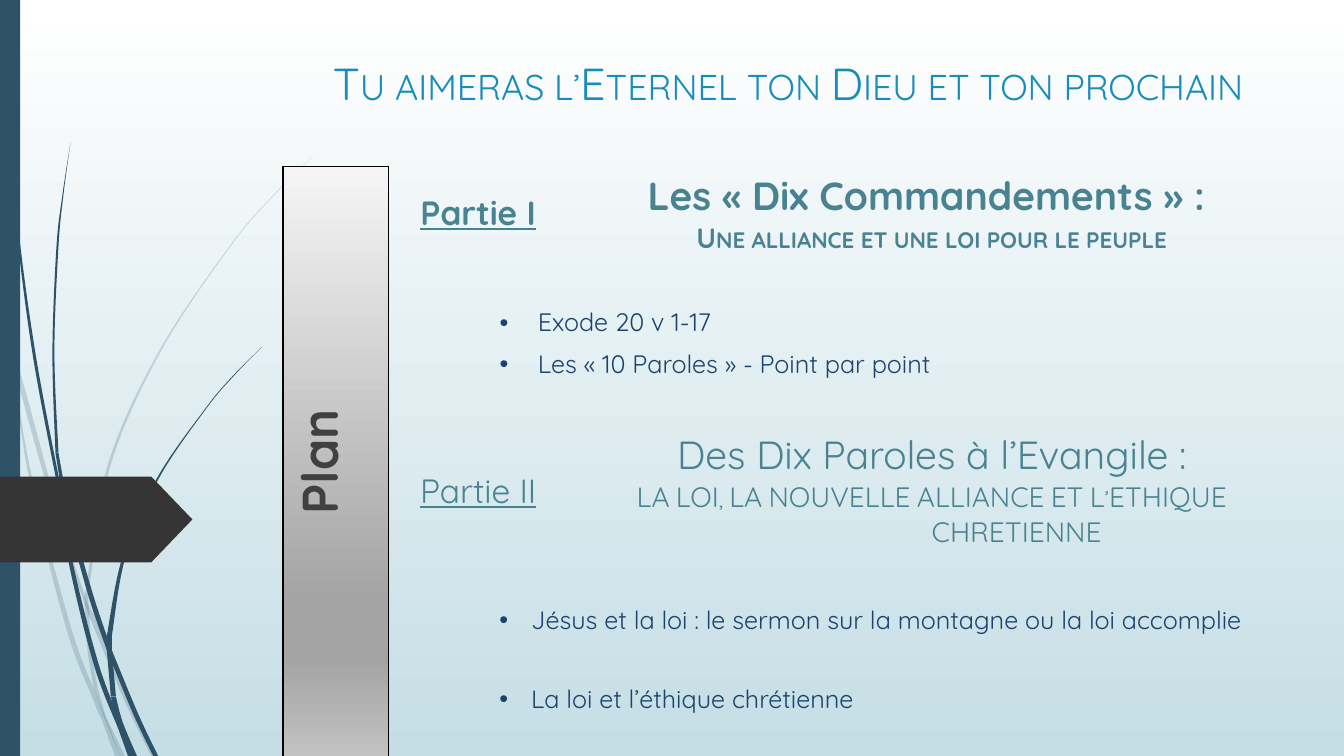
from lxml import etree
from pptx import Presentation, util as u
from pptx.dml.color import RGBColor
from pptx.enum import shapes, text
from pptx.oxml.ns import qn

TITLE = "Tu aimeras l’Eternel ton Dieu et ton prochain"
SIDE = "Plan"
# row number: (label, heading, subheading, bold)
PARTS = {
    0: ("Partie I", "Les « Dix Commandements » : ",
        "Une alliance et une loi pour le peuple", True),
    5: ("Partie II", "Des Dix Paroles à l’Evangile :",
        "LA LOI, LA NOUVELLE ALLIANCE ET L’ETHIQUE CHRETIENNE", False),
}
# row number: (text, left margin in cm, hanging indent in cm)
POINTS = {
    2: ("Exode 20 v 1-17", 3.5, 0.96),
    3: ("Les « 10 Paroles » - Point par point", 3.5, 0.96),
    7: ("Jésus et la loi : le sermon sur la montagne ou la loi accomplie", 3.33, 0.8),
    8: ("La loi et l’éthique chrétienne", 3.33, 0.8),
}
COLS = [2.67, 4.5, 18.36]
ROWS = [2.36, 1.05, 1.04, 1.04, 1.04, 3.29, 1.09, 1.04, 2.95]

THEME = {
    "font": "Quicksand",
    "title": (32, "178DBB"), "side": (36, "404040"), "label": (24, "498392"),
    "head": (28, "498392"), "sub": (20, "498392"), "point": (18, "1C436D"),
    "stem": "2E5369", "tag": "353535", "edge": "000000",
    "sky": [(0, "FFFFFF"), (100, "C5DEE5")],
    "steel": [(0, "F5F5F5"), (74, "A4A4A4"), (83, "A4A4A4"), (100, "C2C2C2")],
}

# Grass blades: (joints, knots); a knot is left edge x, y and breadth in inches,
# a joint is the number of a knot where one section ends and the next begins
PALE = [
    ([1, 4, 5], [(0, 2.82, .01), (.1, 3.44, .01), (.17, 3.76, .05), (.58, 5.22, .04),
                 (.84, 5.99, .03), (.88, 6.1, .05), (1.23, 6.94, .05), (1.5, 7.5, .05)]),
    ([4], [(.11, 3.5, 0), (.28, 4.7, .03), (.65, 6.21, .05), (.92, 6.93, .05),
           (1.01, 7.14, .05), (1.14, 7.5, .05)]),
    ([5, 8, 9], [(3.12, 1.53, 0), (2.68, 1.97, .01), (2.28, 2.44, .01),
                 (1.58, 3.48, .02), (1.07, 4.61, .03), (.85, 5.86, .03),
                 (.84, 5.99, .04), (.87, 6.46, .04), (.93, 6.83, .04),
                 (1.03, 7.11, .02), (1.19, 7.5, .05)]),
]
DARK = [
    ([4, 7], [(.03, 0, .01), (.07, 1.1, .01), (.17, 2.33, .02), (.33, 3.55, .03),
              (.56, 4.77, .03), (.68, 5.57, .04), (.93, 6.59, .05), (1.17, 7.22, .05),
              (1.27, 7.5, .06)]),
    ([4, 5, 7], [(.7, 1.41, 0), (.62, 1.93, .01), (.56, 2.45, .02), (.52, 3.49, .02),
                 (.55, 4.49, .03), (.64, 5.05, .04), (.88, 5.92, .05), (1.06, 6.45, .05),
                 (1.32, 7.08, .05), (1.52, 7.5, .05)]),
    ([5, 6, 7], [(2.6, 3.44, 0), (2.31, 3.73, .01), (2.04, 4.05, .01), (1.56, 4.74, .02),
                 (1.22, 5.51, .03), (1.06, 6.31, .05), (1.06, 6.45, .05),
                 (1.1, 6.91, .05), (1.17, 7.17, .05), (1.3, 7.5, .06)]),
]


def box(*sides):
    return [u.Cm(side) for side in sides]


def paint(shape, color, alpha=None):
    shape.shadow.inherit = False
    shape.fill.solid()
    shape.fill.fore_color.rgb = RGBColor.from_string(color)
    shape.line.fill.background()
    if alpha:
        tint = next(shape.element.iter(qn("a:srgbClr")))
        etree.SubElement(tint, qn("a:alpha"), val=str(alpha * 1000))


def grade(fill, root, stops):
    """Fill from top to bottom; root is the element that holds the fill."""
    fill.gradient()
    fill.gradient_angle = 270
    group = next(root.iter(qn("a:gsLst")))
    for old in list(group):
        group.remove(old)
    for place, color in stops:
        stop = etree.SubElement(group, qn("a:gs"), pos=str(place * 1000))
        etree.SubElement(stop, qn("a:srgbClr"), val=color)


def bend(shape, count):
    """Turn the straight segments of both long edges into smooth curves."""
    outline = next(shape.element.iter(qn("a:pathLst")))[0]
    dots = [(int(dot.get("x")), int(dot.get("y"))) for dot in outline.iter(qn("a:pt"))]
    lines = outline.findall(qn("a:lnTo"))
    for first in (0, count):
        side = dots[first:first + count]
        ends = [side[0], *side, side[-1]]
        for step, (a, b, c, d) in enumerate(zip(ends, ends[1:], ends[2:], ends[3:])):
            curve = etree.Element(qn("a:cubicBezTo"))
            near = [q + (r - p) / 6 for p, q, r in zip(a, b, c)]
            far = [q - (r - p) / 6 for p, q, r in zip(b, c, d)]
            for x, y in (near, far, c):
                etree.SubElement(curve, qn("a:pt"), x=str(round(x)), y=str(round(y)))
            outline.replace(lines[first + step], curve)


def blade(slide, joints, knots, alpha=None):
    for start, end in zip([0, *joints], [*joints, len(knots) - 1]):
        part = knots[start:end + 1]
        edge = [(x, y) for x, y, _ in part]
        edge += [(x + wide, y) for x, y, wide in reversed(part)]
        dots = [tuple(box(x * 2.54, y * 2.54)) for x, y in edge]
        pen = slide.shapes.build_freeform(*dots[0])
        pen.add_line_segments(dots[1:], close=True)
        shape = pen.convert_to_shape()
        bend(shape, len(part))
        paint(shape, THEME["stem"], alpha)


def write(para, words, style, align=text.PP_ALIGN.CENTER, small=False, **extra):
    size, color = THEME[style]
    para.alignment = align
    run = para.add_run()
    run.text = words
    looks = {"name": THEME["font"], "size": u.Pt(size), **extra}
    for key, value in looks.items():
        setattr(run.font, key, value)
    run.font.color.rgb = RGBColor.from_string(color)
    if small:
        run._r.get_or_add_rPr().set("cap", "small")


def bullet(para, words, left, hang):
    write(para, words, "point", text.PP_ALIGN.LEFT)
    para.level = 2
    props = para._p.get_or_add_pPr()
    props.set("marL", str(int(u.Cm(left))))
    props.set("indent", str(-int(u.Cm(hang))))
    etree.SubElement(props, qn("a:buFont"), typeface="Arial")
    etree.SubElement(props, qn("a:buChar"), char="•")


def rule(props, sides):
    """Draw the named sides of a cell as thin lines."""
    for side in reversed(sides):
        line = etree.Element(qn("a:ln" + side), w=str(int(u.Pt(1))))
        fill = etree.SubElement(line, qn("a:solidFill"))
        etree.SubElement(fill, qn("a:srgbClr"), val=THEME["edge"])
        props.insert(0, line)


def plan(slide):
    frame = slide.shapes.add_table(
        len(ROWS), len(COLS), *box(7.13, 4.19, sum(COLS), sum(ROWS)))
    root, grid = frame.element, frame.table
    grid.first_row = grid.horz_banding = False
    next(root.iter(qn("a:tableStyleId"))).text = "{2D5ABB26-0587-4C30-8999-92F81FD0307C}"
    for col, wide in zip(grid.columns, COLS):
        col.width = u.Cm(wide)
    for row, high in zip(grid.rows, ROWS):
        row.height = u.Cm(high)
    for cell in grid.iter_cells():
        cell.fill.background()

    side = grid.cell(0, 0)
    side.merge(grid.cell(len(ROWS) - 1, 0))
    side.vertical_anchor = text.MSO_ANCHOR.MIDDLE
    write(side.text_frame.paragraphs[0], SIDE, "side", bold=True)
    grade(side.fill, root, THEME["steel"])
    bar = [tc.find(qn("a:tcPr")) for tc in root.iter(qn("a:tc"))][::len(COLS)]
    bar[0].set("vert", "vert270")
    for row, props in enumerate(bar):
        rule(props, ["L", "R"] + ["T"] * (row == 0) + ["B"] * (row in (0, len(ROWS) - 1)))

    for row in range(len(ROWS)):
        cell = grid.cell(row, 1)
        cell.vertical_anchor = text.MSO_ANCHOR.MIDDLE
        para = cell.text_frame.paragraphs[0]
        if row in PARTS:
            label, head, sub, bold = PARTS[row]
            write(para, label, "label", bold=bold, underline=True)
            body = grid.cell(row, 2).text_frame
            write(body.paragraphs[0], head, "head", bold=bold)
            write(body.add_paragraph(), sub, "sub", small=True, bold=bold)
            continue
        cell.merge(grid.cell(row, 2))
        if row in POINTS:
            bullet(para, *POINTS[row])


def main():
    deck = Presentation()
    deck.slide_width, deck.slide_height = box(33.87, 19.05)
    slide = deck.slides.add_slide(deck.slide_layouts[6])
    grade(slide.background.fill, slide.element, THEME["sky"])
    for blades, alpha in ((PALE, 20), (DARK, None)):
        for joints, knots in blades:
            blade(slide, joints, knots, alpha)
    kind = shapes.MSO_SHAPE
    paint(slide.shapes.add_shape(kind.RECTANGLE, *box(0, 0, 0.51, 19.05)), THEME["stem"])
    tag = slide.shapes.add_shape(kind.PENTAGON, *box(0, 12.01, 4.85, 2.16))
    tag.adjustments[0] = 0.48
    paint(tag, THEME["tag"])
    title = slide.shapes.add_textbox(*box(7.16, 0.33, 25.4, 3.5))
    title.text_frame.word_wrap = True
    title.text_frame.vertical_anchor = text.MSO_ANCHOR.MIDDLE
    write(title.text_frame.paragraphs[0], TITLE, "title", small=True)
    plan(slide)
    deck.save("out.pptx")


if __name__ == "__main__":
    main()
